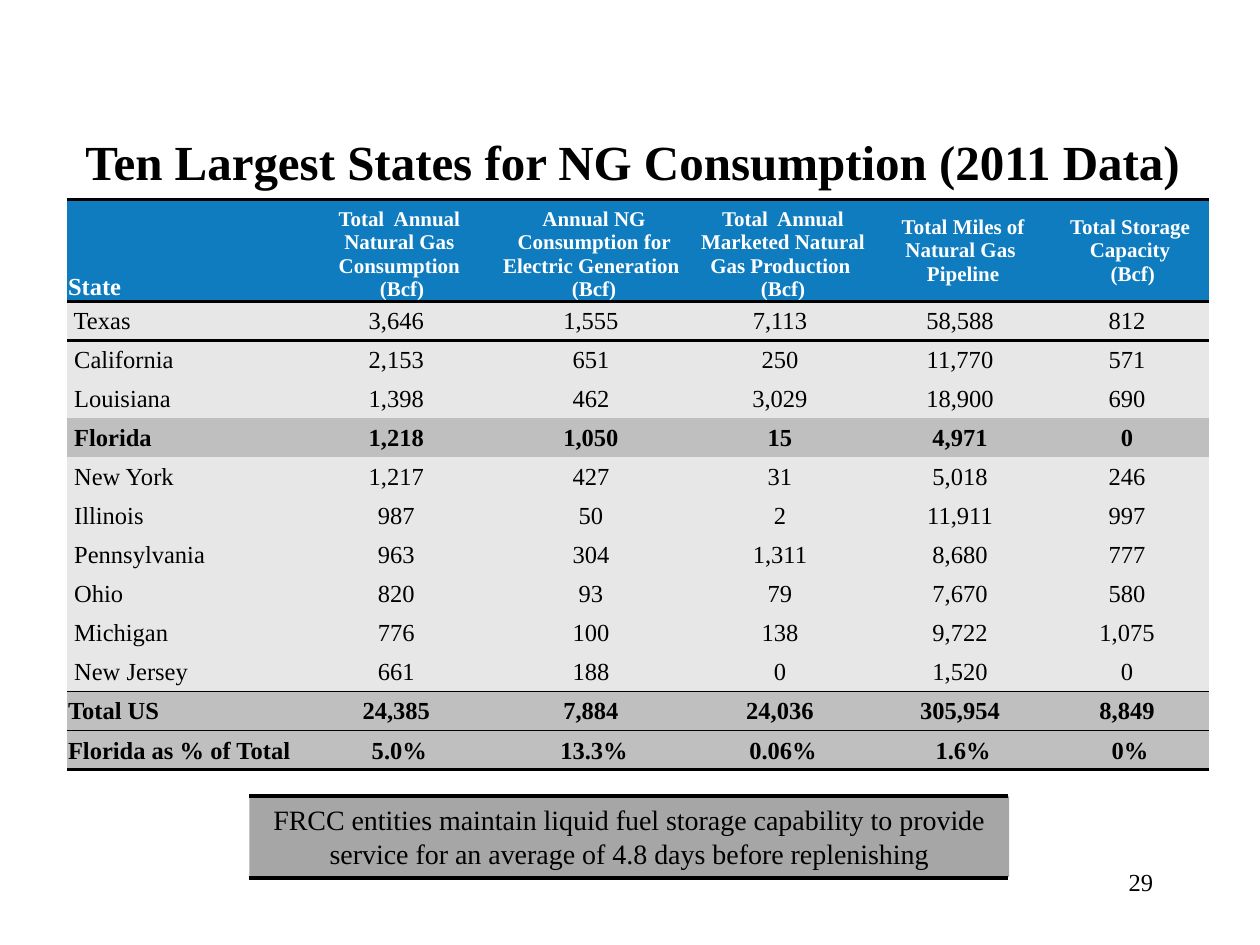
from lxml.etree import SubElement
from pptx import Presentation
from pptx.dml.color import RGBColor
from pptx.enum.shapes import MSO_CONNECTOR as Connector, MSO_SHAPE as Shape
from pptx.enum.text import MSO_ANCHOR as Anchor, PP_ALIGN as Align
from pptx.oxml.ns import qn
from pptx.util import Inches, Pt

COLORS = {"ink": "000000", "white": "FFFFFF", "header": "0F7CBF",
          "row": "E7E7E7", "strong": "BFBFBF", "note": "A6A6A6"}
FONT = "Times New Roman"
UNIT = 0.1  # grid step in inches: 100 columns by 75 rows
NO_STYLE = "{2D5ABB26-0587-4C30-8999-92F81FD0307C}"

HEADINGS = [
    "State",
    "Total  Annual Natural Gas Consumption\n (Bcf)",
    "Annual NG Consumption for Electric Generation \n(Bcf)",
    "Total  Annual\nMarketed Natural Gas Production \n(Bcf)",
    "Total Miles of Natural Gas  Pipeline",
    "Total Storage Capacity\n (Bcf)",
]
STATES = [
    ("Texas", "3,646", "1,555", "7,113", "58,588", "812"),
    ("California", "2,153", "651", "250", "11,770", "571"),
    ("Louisiana", "1,398", "462", "3,029", "18,900", "690"),
    ("Florida", "1,218", "1,050", "15", "4,971", "0"),
    ("New York", "1,217", "427", "31", "5,018", "246"),
    ("Illinois", "987", "50", "2", "11,911", "997"),
    ("Pennsylvania", "963", "304", "1,311", "8,680", "777"),
    ("Ohio", "820", "93", "79", "7,670", "580"),
    ("Michigan", "776", "100", "138", "9,722", "1,075"),
    ("New Jersey", "661", "188", "0", "1,520", "0"),
]
TOTAL = ("Total US", "24,385", "7,884", "24,036", "305,954", "8,849")
SHARE = ("Florida as % of Total", "5.0%", "13.3%", "0.06%", "1.6%", "0%")
COLUMNS = [18.6, 15.6, 15.3, 14.7, 13.9, 12.6]
HEADER_HEIGHT, ROW_HEIGHT = 7.7, 3.1


def grid(units):
    return Inches(units * UNIT)


def color(name):
    return RGBColor.from_string(COLORS[name])


def write(frame, text, size=14, ink="ink", bold=False, align=Align.LEFT):
    """Fill a text frame, one paragraph for each line of text."""
    for index, line in enumerate(text.split("\n")):
        para = frame.paragraphs[0] if index == 0 else frame.add_paragraph()
        para.alignment = align
        span = para.add_run()
        span.text = line
        span.font.name, span.font.size, span.font.bold = FONT, Pt(size), bold
        span.font.color.rgb = color(ink)


class SlideBuilder:
    def __init__(self, page):
        self.page = page

    def text(self, area, text, anchor=Anchor.TOP, **style):
        box = self.page.shapes.add_textbox(*map(grid, area))
        box.text_frame.word_wrap = True
        box.text_frame.vertical_anchor = anchor
        write(box.text_frame, text, **style)

    def panel(self, area, text, fill, **style):
        panel = self.page.shapes.add_shape(Shape.RECTANGLE, *map(grid, area))
        panel.shadow.inherit = False
        panel.fill.solid()
        panel.fill.fore_color.rgb = color(fill)
        panel.line.fill.background()
        panel.text_frame.word_wrap = True
        panel.text_frame.vertical_anchor = Anchor.TOP
        write(panel.text_frame, text, **style)

    def rule(self, left, right, top, weight=2.25):
        line = self.page.shapes.add_connector(
            Connector.STRAIGHT, grid(left), grid(top), grid(right), grid(top))
        line.line.color.rgb = color("ink")
        line.line.width = Pt(weight)
        SubElement(line._element.spPr, qn("a:effectLst"))

    def table(self, left, top, rows, columns, heights):
        frame = self.page.shapes.add_table(
            rows, len(columns), grid(left), grid(top),
            grid(sum(columns)), grid(sum(heights)))
        table = frame.table
        table.first_row = table.horz_banding = False
        table._tbl.tblPr.find(qn("a:tableStyleId")).text = NO_STYLE
        for column, width in zip(table.columns, columns):
            column.width = grid(width)
        for row, height in zip(table.rows, heights):
            row.height = grid(height)
        return table

    def cell(self, cell, text, fill, anchor=Anchor.MIDDLE, top=0, bottom=0, **style):
        cell.margin_left = cell.margin_right = cell.margin_top = Inches(0.01)
        cell.margin_bottom = 0
        cell.vertical_anchor = anchor
        write(cell.text_frame, text, **style)
        # Borders come before the fill in the cell properties
        props = cell._tc.get_or_add_tcPr()
        for tag, weight in (("a:lnT", top), ("a:lnB", bottom)):
            if weight:
                edge = SubElement(props, qn(tag), w=str(Pt(weight)))
                paint = SubElement(edge, qn("a:solidFill"))
                SubElement(paint, qn("a:srgbClr"), val=COLORS["ink"])
        cell.fill.solid()
        cell.fill.fore_color.rgb = color(fill)


def state_table(slide):
    # Each body row: texts, emphasis, top border, bottom border
    body = [([f" {state[0]}"] + [f"{value} " for value in state[1:]],
             state[0] == "Florida", 0, 0) for state in STATES]
    body[0] = (*body[0][:2], 2, 0)
    body[-1] = (*body[-1][:3], 1)
    body.append(([TOTAL[0]] + [f"{value} " for value in TOTAL[1:]], True, 1, 1))
    body.append((SHARE, True, 1, 2))

    heights = [HEADER_HEIGHT] + [ROW_HEIGHT] * len(body)
    table = slide.table(5.3, 15.8, len(heights), COLUMNS, heights)

    # Header row
    for col, heading in enumerate(HEADINGS):
        slide.cell(table.cell(0, col), heading, "header",
                   anchor=Anchor.BOTTOM if col < 4 else Anchor.MIDDLE,
                   top=2, bottom=2, size=12 if col else 14, ink="white",
                   bold=True, align=Align.CENTER if col else Align.LEFT)

    # States and totals
    for row, (texts, strong, top, bottom) in enumerate(body, start=1):
        for col, text in enumerate(texts):
            slide.cell(table.cell(row, col), text, "strong" if strong else "row",
                       top=top, bottom=bottom, bold=strong,
                       align=Align.CENTER if col else Align.LEFT)


def main():
    deck = Presentation()
    deck.slide_width, deck.slide_height = grid(100), grid(75)
    slide = SlideBuilder(deck.slides.add_slide(deck.slide_layouts[6]))

    # Title and page number
    slide.text((3.3, 9.9, 93.8, 5.8), "Ten Largest States for NG Consumption (2011 Data)",
               anchor=Anchor.MIDDLE, size=28, bold=True, align=Align.CENTER)
    slide.text((71.7, 68.3, 20.8, 5), "29", align=Align.RIGHT)

    state_table(slide)

    # Note between two rules
    slide.panel((19.8, 63.2, 60.3, 6.4),
                "FRCC entities maintain liquid fuel storage capability to provide "
                "service for an average of 4.8 days before replenishing",
                "note", size=16, align=Align.CENTER)
    for top in (63.2, 69.7):
        slide.rule(19.8, 80, top)

    deck.save("out.pptx")


if __name__ == "__main__":
    main()
